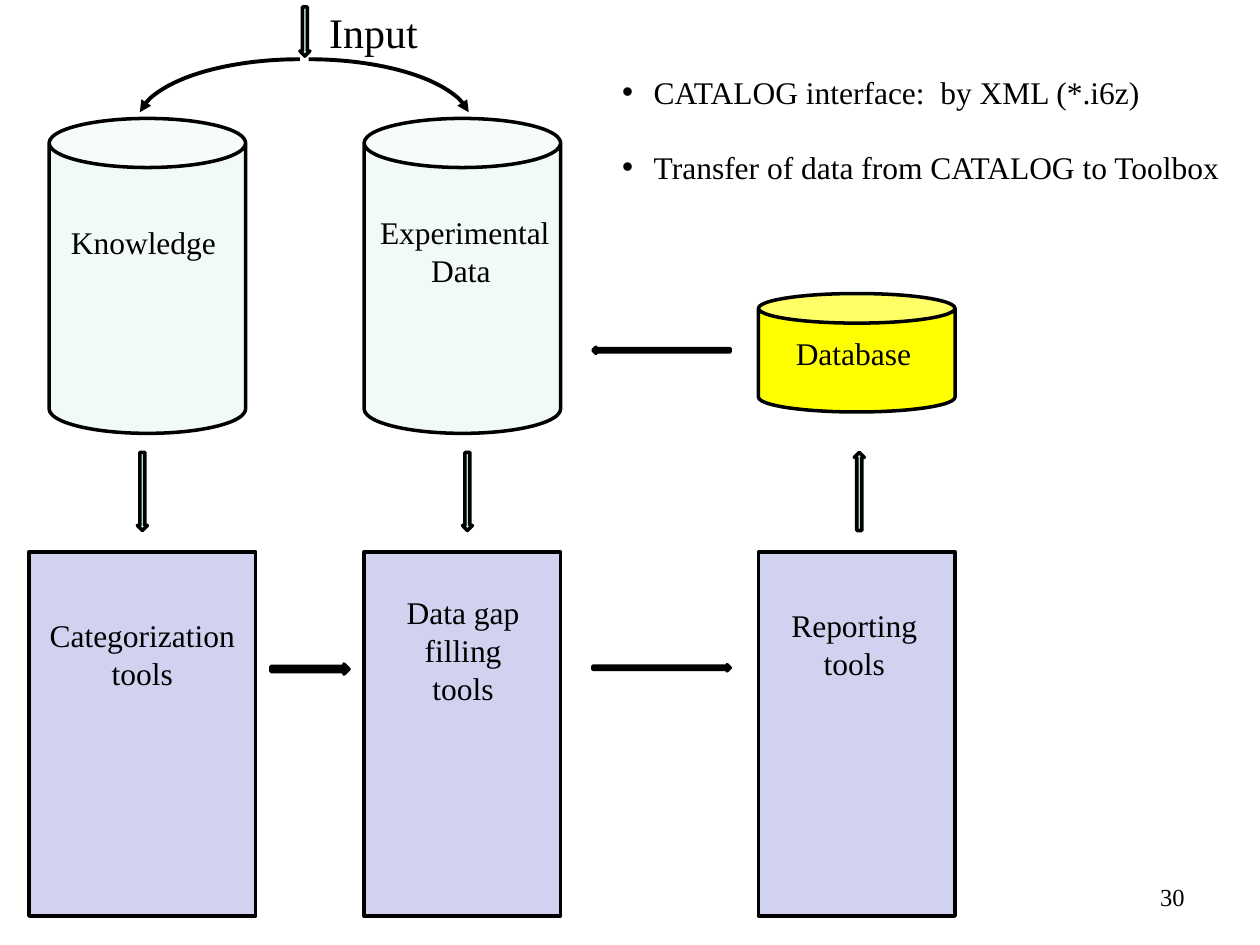
"""Build a slide showing how data flows between databases and tools."""
from lxml import etree
from pptx import Presentation
from pptx.dml.color import RGBColor
from pptx.enum.shapes import MSO_SHAPE
from pptx.enum.text import MSO_ANCHOR, PP_ALIGN
from pptx.oxml.ns import qn
from pptx.util import Inches, Pt

ARC, CAN, RECTANGLE = MSO_SHAPE.ARC, MSO_SHAPE.CAN, MSO_SHAPE.RECTANGLE
DOWN, UP = MSO_SHAPE.DOWN_ARROW, MSO_SHAPE.UP_ARROW
LEFT, RIGHT = MSO_SHAPE.LEFT_ARROW, MSO_SHAPE.RIGHT_ARROW
CENTER, JUSTIFY, ALIGN_RIGHT = PP_ALIGN.CENTER, PP_ALIGN.JUSTIFY, PP_ALIGN.RIGHT
TOP, MIDDLE = MSO_ANCHOR.TOP, MSO_ANCHOR.MIDDLE

BLACK, PALE, YELLOW, LILAC, TEAL = "000000", "F1F9F9", "FFFF00", "D1D1F0", "BBE0E3"
FONT = "Times New Roman"
COLUMNS = {"knowledge": 1.17, "data": 3.67, "report": 6.8}
COLUMN_WIDTH = 1.56
CAN_TOP, CAN_HEIGHT = 0.94, 2.5
TOOL_TOP, TOOL_HEIGHT = 4.38, 2.89
ARROW_MIDDLE, ARROW_LENGTH, ARROW_WIDTH = 3.9, 0.62, 0.08
LONG_LENGTH, LONG_WIDTH = 1.09, 0.05

# kind, column, top, width, height, fill
BLOCKS = [
    (CAN, "knowledge", CAN_TOP, COLUMN_WIDTH, CAN_HEIGHT, PALE),
    (CAN, "data", CAN_TOP, COLUMN_WIDTH, CAN_HEIGHT, PALE),
    (CAN, "report", 2.33, COLUMN_WIDTH, 0.94, YELLOW),
    (RECTANGLE, "knowledge", TOOL_TOP, 1.8, TOOL_HEIGHT, LILAC),
    (RECTANGLE, "data", TOOL_TOP, COLUMN_WIDTH, TOOL_HEIGHT, LILAC),
    (RECTANGLE, "report", TOOL_TOP, COLUMN_WIDTH, TOOL_HEIGHT, LILAC),
]
ARROWS = [
    (DOWN, 2.42, 0.25, ARROW_WIDTH, 0.39, TEAL),
    (DOWN, 1.13, ARROW_MIDDLE, ARROW_WIDTH, ARROW_LENGTH, TEAL),
    (DOWN, 3.71, ARROW_MIDDLE, ARROW_WIDTH, ARROW_LENGTH, TEAL),
    (UP, 6.82, ARROW_MIDDLE, ARROW_WIDTH, ARROW_LENGTH, TEAL),
    (RIGHT, 2.46, 5.31, ARROW_LENGTH, ARROW_WIDTH, BLACK),
    (RIGHT, 5.25, 5.3, LONG_LENGTH, LONG_WIDTH, BLACK),
    (LEFT, 5.25, 2.78, LONG_LENGTH, LONG_WIDTH, BLACK),
]
ARCS = [(1.16, False), (1.09, True)]
LABELS = [
    (["Knowledge "], (0.44, 1.72, 1.46, 0.71), {}),
    (["Experimental", "Data "], (2.91, 1.64, 1.56, 0.71), {}),
    (["Database "], (6.18, 2.6, 1.25, 0.4), {"fill": YELLOW}),
    (["Categorization", "tools"], (0.28, 4.84, 1.7, 0.71), {}),
    (["Data gap", "filling", "tools"], (3.12, 4.66, 1.11, 1.01), {}),
    (["Reporting tools"], (5.94, 4.76, 1.68, 0.71), {"wrap": True}),
    (["Input"], (2.51, 0, 0.91, 0.51), {"size": 24}),
    (["30"], (7.17, 6.95, 2.33, 0.4), {"size": 14, "wrap": True, "align": ALIGN_RIGHT}),
    (["CATALOG interface:  by XML (*.i6z)", "Transfer of data from CATALOG to Toolbox"],
     (4.84, 0.52, 5.04, 1.01),
     {"wrap": True, "align": JUSTIFY, "anchor": MIDDLE, "bullet": True, "gap": 21.5}),
]


def color(value):
    return RGBColor.from_string(value)


def add_block(slide, kind, box, fill=None, line_width=2):
    shape = slide.shapes.add_shape(kind, *map(Inches, box))
    shape.shadow.inherit = False
    if fill:
        shape.fill.solid()
        shape.fill.fore_color.rgb = color(fill)
    else:
        shape.fill.background()
    shape.line.color.rgb = color(BLACK)
    shape.line.width = Pt(line_width)
    return shape


def add_centered(slide, kind, center, middle, width, height, fill):
    box = (center - width / 2, middle - height / 2, width, height)
    return add_block(slide, kind, box, fill)


def add_arc(slide, left, flipped):
    shape = add_block(slide, ARC, (left, 0.47, 2.58, 1.02), line_width=2.25)
    shape.adjustments[0], shape.adjustments[1] = 162, 213.606
    line = shape.line._get_or_add_ln()
    etree.SubElement(line, qn("a:tailEnd"), type="triangle")
    if flipped:
        shape.element.spPr.find(qn("a:xfrm")).set("flipH", "1")


def add_bullet(paragraph):
    properties = paragraph._p.get_or_add_pPr()
    properties.set("marL", str(Inches(0.25)))
    properties.set("indent", str(-Inches(0.25)))
    etree.SubElement(properties, qn("a:buFont"), typeface="Arial")
    etree.SubElement(properties, qn("a:buChar"), char="•")


def add_label(slide, lines, box, options):
    shape = slide.shapes.add_textbox(*map(Inches, box))
    if "fill" in options:
        shape.fill.solid()
        shape.fill.fore_color.rgb = color(options["fill"])
    frame = shape.text_frame
    frame.word_wrap = options.get("wrap", False)
    frame.vertical_anchor = options.get("anchor", TOP)
    font_format = {"name": FONT, "size": Pt(options.get("size", 18))}
    for index, text in enumerate(lines):
        paragraph = frame.paragraphs[0] if index == 0 else frame.add_paragraph()
        paragraph.alignment = options.get("align", CENTER)
        if index and "gap" in options:
            paragraph.space_before = Pt(options["gap"])
        if options.get("bullet"):
            add_bullet(paragraph)
        run = paragraph.add_run()
        run.text = text
        for name, value in font_format.items():
            setattr(run.font, name, value)
        run.font.color.rgb = color(BLACK)


def main():
    presentation = Presentation()
    presentation.slide_width, presentation.slide_height = Inches(10), Inches(7.5)
    slide = presentation.slides.add_slide(presentation.slide_layouts[6])
    for kind, column, top, width, height, fill in BLOCKS:
        center = COLUMNS[column] if kind == CAN or column != "knowledge" else 1.13
        add_centered(slide, kind, center, top + height / 2, width, height, fill)
    for left, flipped in ARCS:
        add_arc(slide, left, flipped)
    for arrow in ARROWS:
        add_centered(slide, *arrow)
    for lines, box, options in LABELS:
        add_label(slide, lines, box, options)
    presentation.save("out.pptx")


if __name__ == "__main__":
    main()
